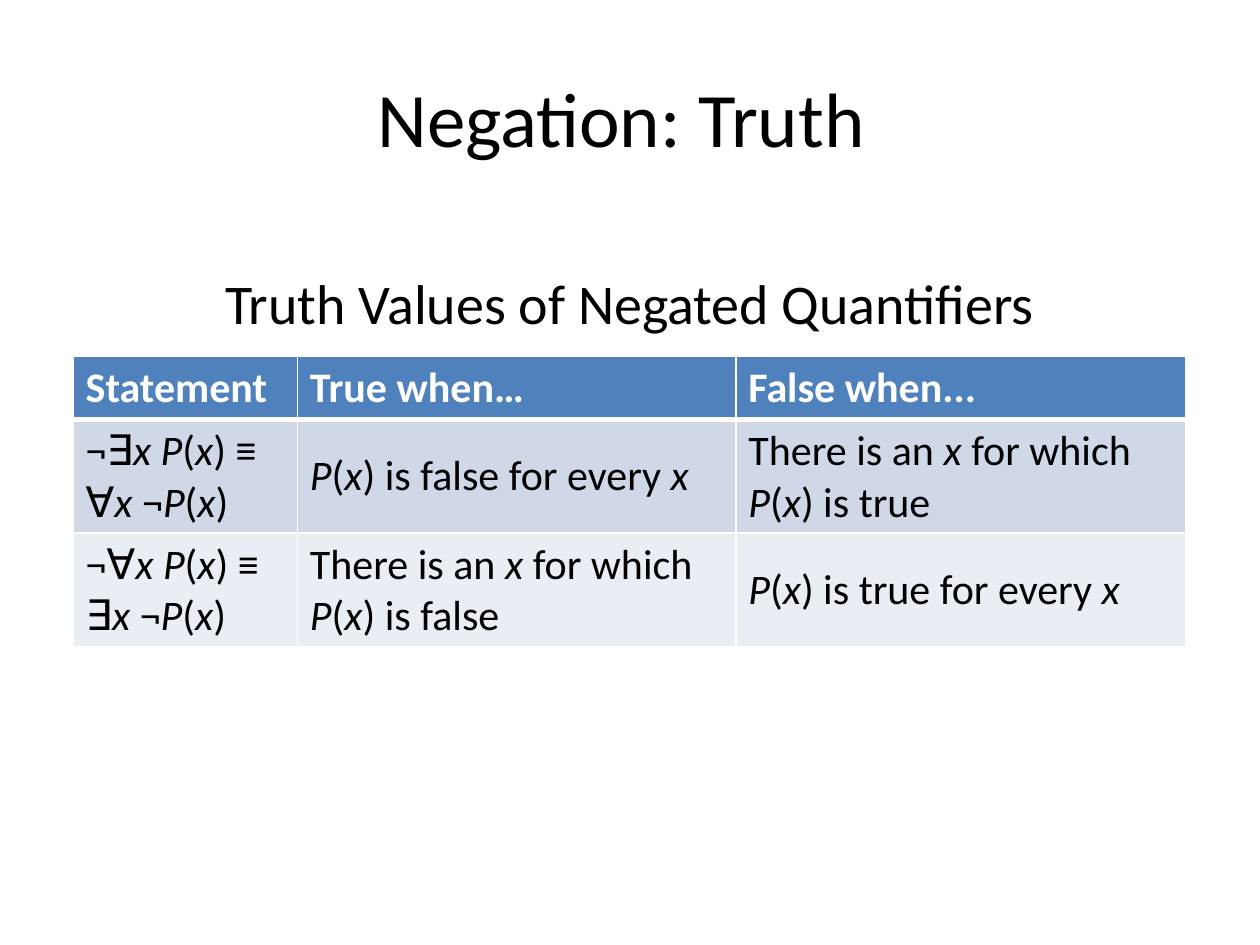
"""Build a slide showing the truth values of negated quantifiers."""
from dataclasses import dataclass

import lxml.etree
import pptx
import pptx.dml.color
import pptx.enum.text
import pptx.oxml.ns
import pptx.slide
import pptx.table
import pptx.text.text
import pptx.util

Inches = pptx.util.Inches
FONT = "Calibri"
COLORS = {
    "text": "000000",
    "white": "FFFFFF",
    "header": "4F81BD",
    "odd": "D0D8E8",
    "even": "E9EDF4",
}
ITALIC_MARK = "_"


@dataclass
class Heading:
    text: str
    top: float
    height: float
    size: int
    anchor: pptx.enum.text.MSO_ANCHOR
    space_before: float = 0


@dataclass
class Row:
    cells: tuple[str, str, str]
    height: float
    fill: str
    color: str = "text"
    bold: bool = False
    top_line: float = 1
    bottom_line: float = 1


HEADINGS = [
    Heading("Negation: Truth ", 0.3, 1.25, 44, pptx.enum.text.MSO_ANCHOR.MIDDLE),
    Heading("Truth Values of Negated Quantifiers", 2.08, 0.83, 32,
            pptx.enum.text.MSO_ANCHOR.TOP, 6.4),
]
COLUMN_WIDTHS = [1.78, 3.48, 3.57]
ROWS = [
    Row(("Statement", "True when…", "False when..."), 0.5, "header", "white", True,
        bottom_line=3),
    Row(("¬∃_x P_(_x_) ≡\n∀_x_ ¬_P_(_x_)",
         "_P_(_x_) is false for every _x_",
         "There is an_ x _for which_ P_(_x_) is true"), 0.9, "odd", top_line=3),
    Row(("¬∀_x P_(_x_) ≡\n∃_x_ ¬_P_(_x_)",
         "There is an_ x _for which_ P_(_x_) is false",
         "_P_(_x_) is true for every _x_"), 0.9, "even"),
]


def rgb(name: str) -> pptx.dml.color.RGBColor:
    """Return the named colour."""
    return pptx.dml.color.RGBColor.from_string(COLORS[name])


def format_font(font: pptx.text.text.Font, size: int, color: str, bold: bool = False) -> None:
    """Set the face, size, colour and weight of a font."""
    font.name = FONT
    font.size = pptx.util.Pt(size)
    font.color.rgb = rgb(color)
    font.bold = bold


def add_heading(s: pptx.slide.Slide, heading: Heading) -> None:
    """Add a centred heading across the slide."""
    sp = s.shapes.add_textbox(Inches(0.5), Inches(heading.top), Inches(9), Inches(heading.height))
    tf = sp.text_frame
    tf.word_wrap = True
    tf.vertical_anchor = heading.anchor
    p = tf.paragraphs[0]
    p.text = heading.text
    p.alignment = pptx.enum.text.PP_ALIGN.CENTER
    p.space_before = pptx.util.Pt(heading.space_before)
    format_font(p.runs[0].font, heading.size, "text")


def set_borders(cell: pptx.table._Cell, row: Row) -> None:
    """Draw white lines on the four sides of a cell."""
    qn = pptx.oxml.ns.qn
    widths = {"lnL": 1, "lnR": 1, "lnT": row.top_line, "lnB": row.bottom_line}
    tc_pr = cell._tc.get_or_add_tcPr()
    for i, (side, width) in enumerate(widths.items()):
        line = lxml.etree.Element(qn(f"a:{side}"), w=str(pptx.util.Pt(width)))
        fill = lxml.etree.SubElement(line, qn("a:solidFill"))
        lxml.etree.SubElement(fill, qn("a:srgbClr"), val=COLORS["white"])
        tc_pr.insert(i, line)


def fill_cell(cell: pptx.table._Cell, text: str, row: Row) -> None:
    """Write marked-up text into a cell and style it."""
    cell.fill.solid()
    cell.fill.fore_color.rgb = rgb(row.fill)
    cell.vertical_anchor = pptx.enum.text.MSO_ANCHOR.MIDDLE
    set_borders(cell, row)
    tf = cell.text_frame
    tf.text = "\n" * text.count("\n")
    for p, line in zip(tf.paragraphs, text.split("\n")):
        for i, part in enumerate(line.split(ITALIC_MARK)):
            if part:
                r = p.add_run()
                r.text = part
                format_font(r.font, 24, row.color, row.bold)
                r.font.italic = i % 2 == 1


def add_truth_table(s: pptx.slide.Slide) -> None:
    """Add the table of statements and their truth conditions."""
    width, height = sum(COLUMN_WIDTHS), sum(row.height for row in ROWS)
    table = s.shapes.add_table(len(ROWS), len(COLUMN_WIDTHS), Inches(0.58), Inches(2.83),
                               Inches(width), Inches(height)).table
    for column, column_width in zip(table.columns, COLUMN_WIDTHS):
        column.width = Inches(column_width)
    for i, row in enumerate(ROWS):
        table.rows[i].height = Inches(row.height)
        for j, text in enumerate(row.cells):
            fill_cell(table.cell(i, j), text, row)


def main() -> None:
    """Build and save the presentation."""
    prs = pptx.Presentation()
    prs.slide_width, prs.slide_height = Inches(10), Inches(7.5)
    s = prs.slides.add_slide(prs.slide_layouts[6])
    for heading in HEADINGS:
        add_heading(s, heading)
    add_truth_table(s)
    prs.save("out.pptx")


if __name__ == "__main__":
    main()
